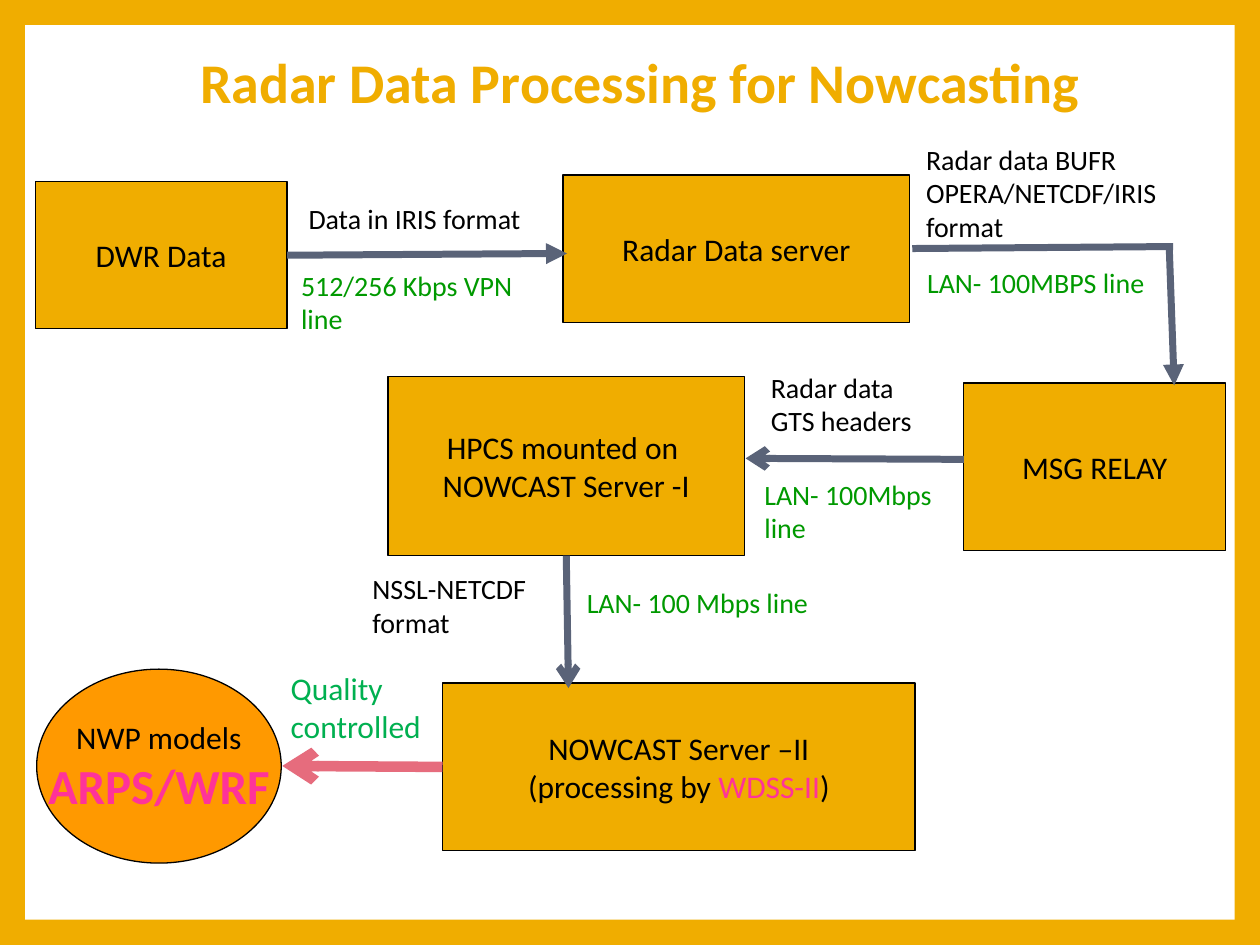
from lxml import etree
from pptx import Presentation
from pptx.dml.color import RGBColor
from pptx.enum.shapes import MSO_CONNECTOR, MSO_SHAPE
from pptx.enum.text import MSO_ANCHOR, MSO_AUTO_SIZE, PP_ALIGN
from pptx.oxml.ns import qn
from pptx.util import Cm, Pt

RECT, OVAL = MSO_SHAPE.RECTANGLE, MSO_SHAPE.OVAL
STRAIGHT = MSO_CONNECTOR.STRAIGHT
CENTER, MIDDLE = PP_ALIGN.CENTER, MSO_ANCHOR.MIDDLE
BOTTOM, RIGHT, LEFT = 2, 3, 1

FONT = "Calibri"
GOLD, ORANGE, WHITE, BLACK = "F0AD00", "FF9900", "FFFFFF", "000000"
GREEN, BRIGHT_GREEN, PINK = "009900", "00B050", "FF3399"
SLATE, ROSE = "5A6378", "E66C7D"

TITLE = "Radar Data Processing for Nowcasting"

# Positions are left, top, width, height in cm.
# Node paragraphs are lists of runs: text, size, colour, bold.
NODES = {
    "dwr": (RECT, GOLD, (0.71, 3.66, 5.08, 2.97),
            [[("DWR Data", 18, BLACK, False)]]),
    "radar": (RECT, GOLD, (11.35, 3.53, 6.99, 2.97),
              [[("Radar Data server", 18, BLACK, False)]]),
    "relay": (RECT, GOLD, (19.43, 7.72, 5.28, 3.38),
              [[("MSG RELAY", 18, BLACK, False)]]),
    "hpcs": (RECT, GOLD, (7.82, 7.59, 7.19, 3.61),
             [[("HPCS mounted on ", 18, BLACK, False)],
              [("NOWCAST Server -I", 18, BLACK, False)]]),
    "nowcast": (RECT, GOLD, (8.92, 13.77, 9.53, 3.38),
                [[("NOWCAST Server –II", 18, BLACK, False)],
                 [("(processing by ", 18, BLACK, False),
                  ("WDSS-II", 18, PINK, False),
                  (")", 18, BLACK, False)]]),
    "models": (OVAL, ORANGE, (0.74, 13.49, 4.93, 3.91),
               [[("NWP models", 18, BLACK, False)],
                [("ARPS/WRF", 28, PINK, True)]]),
}

LABELS = [
    ("Data in IRIS format", (5.97, 3.94, 5.16, 0.94), 16, BLACK),
    ("512/256 Kbps VPN line", (5.82, 5.28, 5.69, 0.94), 16, GREEN),
    ("LAN- 100MBPS line", (18.44, 5.23, 5.26, 0.94), 16, GREEN),
    ("Radar data BUFR OPERA/NETCDF/IRIS format",
     (18.42, 2.74, 6.35, 2.29), 16, BLACK),
    ("LAN- 100Mbps line", (15.16, 9.5, 4.24, 1.63), 16, GREEN),
    ("Radar data GTS headers", (15.29, 7.34, 3.81, 1.63), 16, BLACK),
    ("LAN- 100 Mbps line", (11.58, 11.68, 5.51, 0.94), 16, GREEN),
    ("NSSL-NETCDF format", (7.26, 11.4, 4.01, 1.63), 16, BLACK),
    ("Quality controlled", (5.61, 13.36, 3.61, 1.78), 18, BRIGHT_GREEN),
]

# start point, end point, colour, width, arrowhead, (node, side) joined at start
ARROWS = [
    ((5.79, 5.14), (11.43, 5.11), SLATE, 4, "triangle", ("dwr", RIGHT)),
    ((18.39, 5.01), (23.65, 4.97), SLATE, 4, None, None),
    ((23.57, 4.97), (23.67, 7.77), SLATE, 4, "triangle", None),
    ((19.43, 9.26), (15.03, 9.24), SLATE, 4, "arrow", None),
    ((8.92, 15.46), (5.69, 15.44), ROSE, 6, "arrow", ("nowcast", LEFT)),
    ((11.42, 11.2), (11.46, 13.87), SLATE, 4, "arrow", ("hpcs", BOTTOM)),
]


def rgb(value):
    return RGBColor.from_string(value)


def cm(values):
    return [Cm(v) for v in values]


def add_run(p, text, size, color, bold=False):
    r = p.add_run()
    r.text = text
    r.font.name = FONT
    r.font.size = Pt(size)
    r.font.bold = bold
    r.font.color.rgb = rgb(color)


def add_block(slide, kind, box, fill, line=None):
    sp = slide.shapes.add_shape(kind, *cm(box))
    sp.shadow.inherit = False
    sp.fill.solid()
    sp.fill.fore_color.rgb = rgb(fill)
    if line:
        sp.line.color.rgb = rgb(line)
        sp.line.width = Pt(0.75)
    else:
        sp.line.fill.background()
    return sp


def add_node(slide, kind, fill, box, paragraphs):
    sp = add_block(slide, kind, box, fill, BLACK)
    tf = sp.text_frame
    tf.word_wrap = False
    tf.vertical_anchor = MIDDLE
    for i, runs in enumerate(paragraphs):
        p = tf.add_paragraph() if i else tf.paragraphs[0]
        p.alignment = CENTER
        for run in runs:
            add_run(p, *run)
    return sp


def add_label(slide, text, box, size, color):
    tf = slide.shapes.add_textbox(*cm(box)).text_frame
    tf.word_wrap = True
    tf.auto_size = MSO_AUTO_SIZE.SHAPE_TO_FIT_TEXT
    add_run(tf.paragraphs[0], text, size, color)


def add_arrow(slide, start, end, color, width, head, joint, nodes):
    line = slide.shapes.add_connector(STRAIGHT, *cm(start + end))
    if joint:
        name, side = joint
        line.begin_connect(nodes[name], side)
    line.line.color.rgb = rgb(color)
    line.line.width = Pt(width)
    if head:
        etree.SubElement(line.line._get_or_add_ln(), qn("a:tailEnd"), type=head)
    etree.SubElement(line._element.spPr, qn("a:effectLst"))


def add_title(slide):
    title = slide.shapes.title
    title.left, title.top, title.width, title.height = cm((2.62, 0.56, 20.57, 2.31))
    tf = title.text_frame
    tf.vertical_anchor = MIDDLE
    p = tf.paragraphs[0]
    p.alignment = CENTER
    p.line_spacing = 0.9
    add_run(p, TITLE, 32, GOLD, True)


def main():
    prs = Presentation()
    prs.slide_width, prs.slide_height = Cm(25.4), Cm(19.05)
    slide = prs.slides.add_slide(prs.slide_layouts[5])
    background = slide.background.fill
    background.solid()
    background.fore_color.rgb = rgb(GOLD)

    panel = add_block(slide, RECT, (0.51, 0.51, 24.38, 18.03), WHITE)
    slide.shapes.title._element.addprevious(panel._element)
    add_title(slide)

    nodes = {name: add_node(slide, *node) for name, node in NODES.items()}
    for label in LABELS:
        add_label(slide, *label)
    for arrow in ARROWS:
        add_arrow(slide, *arrow, nodes)
    prs.save("out.pptx")


if __name__ == "__main__":
    main()
